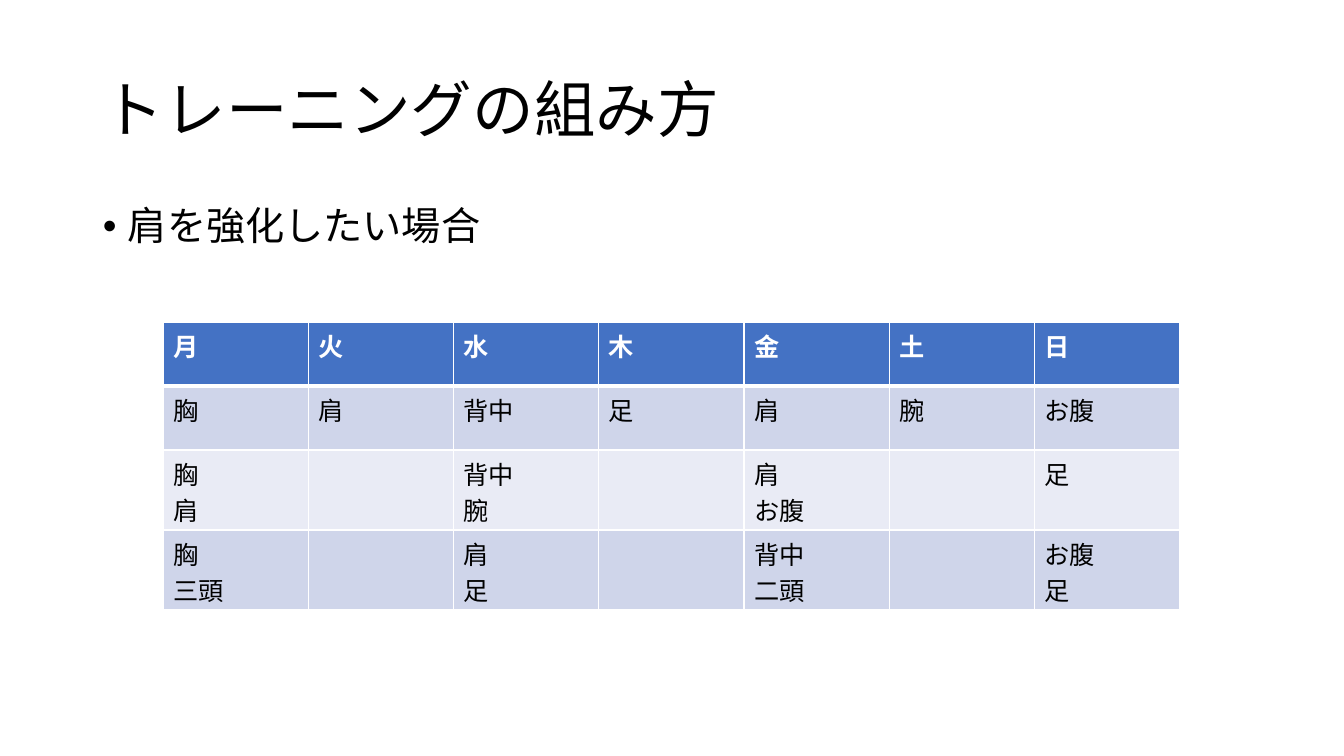
from lxml import etree
from pptx import Presentation
from pptx.dml.color import RGBColor
from pptx.enum.text import MSO_ANCHOR
from pptx.oxml.ns import qn
from pptx.util import Pt

MIDDLE, TOP = MSO_ANCHOR.MIDDLE, MSO_ANCHOR.TOP
PX = 914400 / 100.8
FONT = "Noto Sans CJK JP"
BLACK = RGBColor(0x00, 0x00, 0x00)
WHITE = RGBColor(0xFF, 0xFF, 0xFF)
HEADER_BLUE = RGBColor(0x44, 0x72, 0xC4)
BAND_DARK = RGBColor(0xCF, 0xD5, 0xEA)
BAND_LIGHT = RGBColor(0xE9, 0xEB, 0xF5)


def px(length):
    return round(length * PX)


def add_text(paragraph, text, size, color=BLACK, bold=False):
    run = paragraph.add_run()
    run.text = text
    run.font.size = Pt(size)
    run.font.bold = bold
    run.font.color.rgb = color
    run.font.name = FONT
    etree.SubElement(run.font._element, qn("a:ea"), typeface=FONT)


prs = Presentation()
prs.slide_width, prs.slide_height = px(1344), px(756)
slide = prs.slides.add_slide(prs.slide_layouts[6])

# Title and bullet line
headings = [
    ("トレーニングの組み方", 40, 146, 44, MIDDLE),
    ("肩を強化したい場合", 202, 176, 28, TOP),
]
for text, top, height, size, anchor in headings:
    frame = slide.shapes.add_textbox(px(93), px(top), px(1159), px(height)).text_frame
    frame.word_wrap = True
    frame.vertical_anchor = anchor
    line = frame.paragraphs[0]
    line.line_spacing = 0.9
    add_text(line, text, size)

line.space_before = Pt(10)
bullet = line._p.get_or_add_pPr()
bullet.set("marL", str(px(25)))
bullet.set("indent", str(px(-25)))
etree.SubElement(bullet, qn("a:buFont"), typeface="Arial")
etree.SubElement(bullet, qn("a:buChar"), char="•")

# Weekly training plan
plan = [
    ["月", "火", "水", "木", "金", "土", "日"],
    ["胸", "肩", "背中", "足", "肩", "腕", "お腹"],
    ["胸\n肩", "", "背中\n腕", "", "肩\nお腹", "", "足"],
    ["胸\n三頭", "", "肩\n足", "", "背中\n二頭", "", "お腹\n足"],
]
row_heights = [64, 64, 80, 80]
row_fills = [HEADER_BLUE, BAND_DARK, BAND_LIGHT, BAND_DARK]
week = slide.shapes.add_table(
    len(plan), len(plan[0]), px(163), px(322), px(1017), px(sum(row_heights))
).table
for day in week.columns:
    day.width = px(1017 / len(plan[0]))

for r, workouts in enumerate(plan):
    week.rows[r].height = px(row_heights[r])
    for c, workout in enumerate(workouts):
        cell = week.cell(r, c)
        # Borders: 1 pt white, 3 pt under the header
        borders = cell._tc.get_or_add_tcPr()
        for side in ("L", "R", "T", "B"):
            under_header = (r, side) in ((0, "B"), (1, "T"))
            border = etree.SubElement(
                borders, qn("a:ln" + side), w=str(Pt(3 if under_header else 1))
            )
            fill = etree.SubElement(border, qn("a:solidFill"))
            etree.SubElement(fill, qn("a:srgbClr"), val=str(WHITE))
        cell.fill.solid()
        cell.fill.fore_color.rgb = row_fills[r]
        # One paragraph per body part
        for i, part in enumerate(workout.split("\n") if workout else []):
            frame = cell.text_frame
            paragraph = frame.add_paragraph() if i else frame.paragraphs[0]
            add_text(paragraph, part, 18, BLACK if r else WHITE, bold=r == 0)

prs.save("out.pptx")
